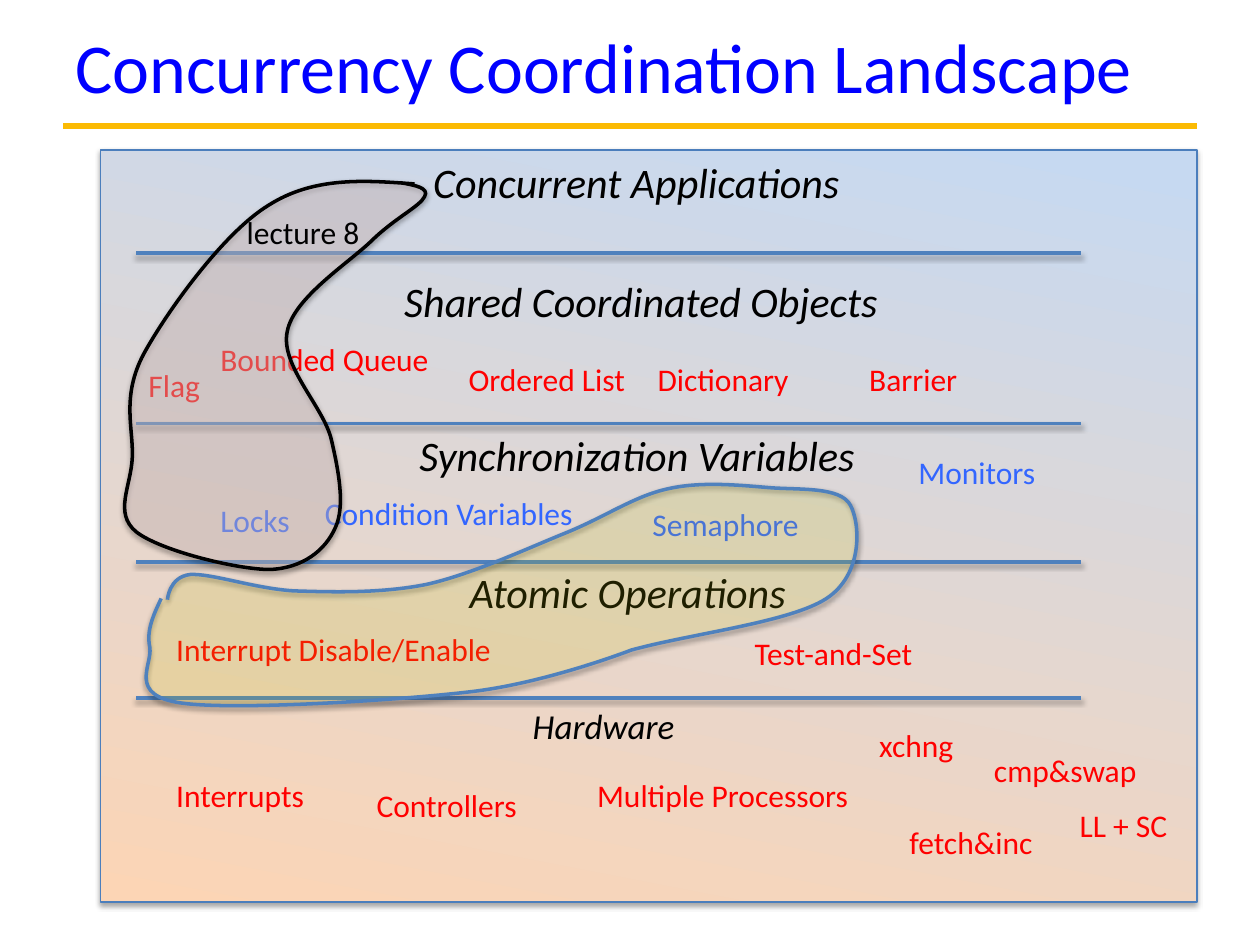
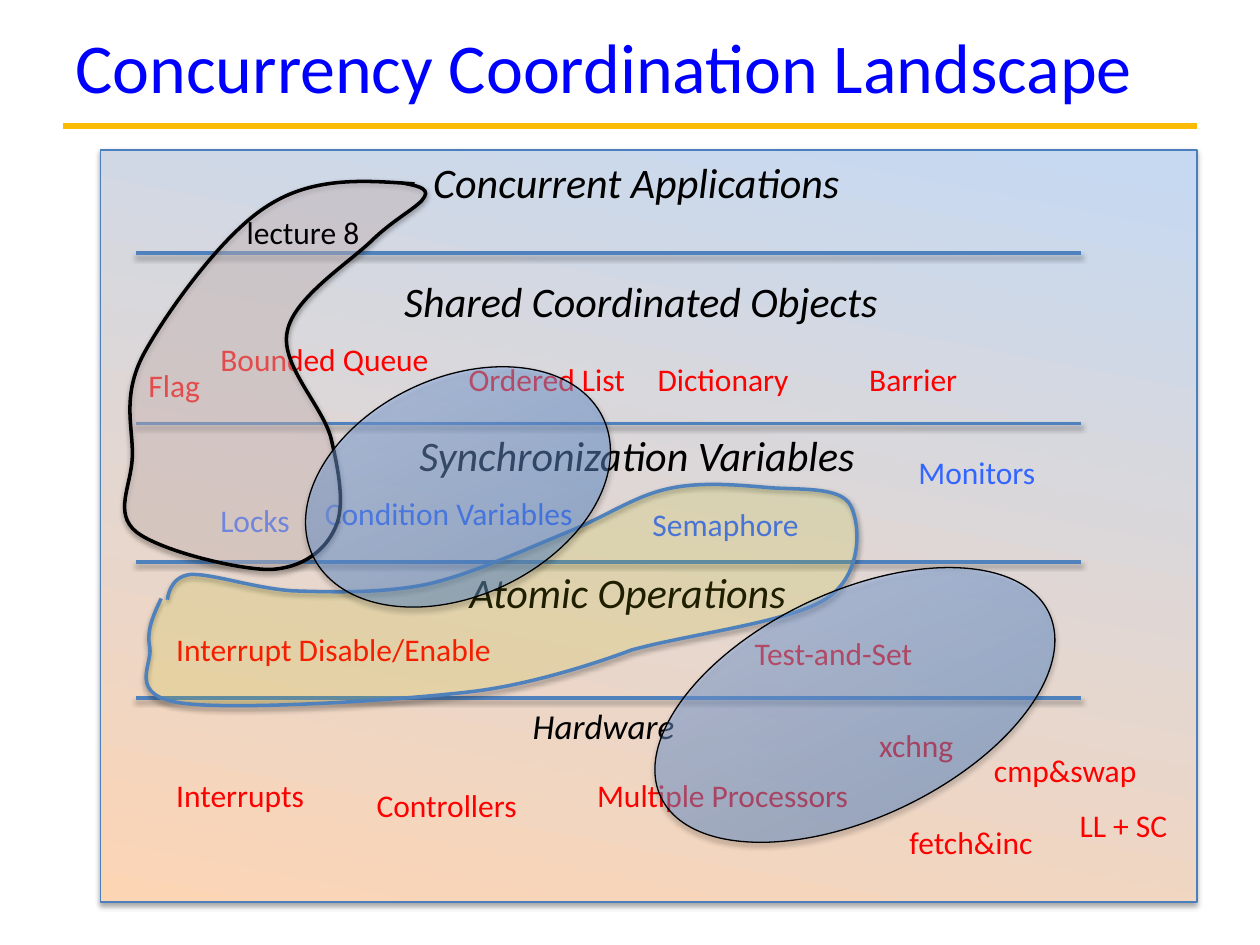
from lxml import etree
from pptx import Presentation
from pptx.dml.color import RGBColor
from pptx.enum.shapes import MSO_CONNECTOR, MSO_SHAPE
from pptx.enum.text import MSO_ANCHOR, MSO_AUTO_SIZE, PP_ALIGN
from pptx.oxml.ns import qn
from pptx.util import Inches, Pt

STRAIGHT = MSO_CONNECTOR.STRAIGHT
RECTANGLE, OVAL = MSO_SHAPE.RECTANGLE, MSO_SHAPE.OVAL
LEFT, MIDDLE = PP_ALIGN.LEFT, MSO_ANCHOR.MIDDLE
NO_FIT, GROW = MSO_AUTO_SIZE.NONE, MSO_AUTO_SIZE.SHAPE_TO_FIT_TEXT

FONT = "Calibri"
TITLE = "Concurrency Coordination Landscape"
COLORS = {
    "title": "0000FF", "rule": "FBBA03", "black": "000000",
    "red": "FF0000", "blue": "3366FF", "divider": "4F81BD",
    "panel_line": "4B7EBC", "panel_top": "C6D9F1", "panel_bottom": "FCD5B5",
    "lecture": "F2DCDB", "semaphore": "FFFF00",
    "oval_dark": "3F80CE", "oval_light": "A4C4FF",
}
C = {name: RGBColor.from_string(value) for name, value in COLORS.items()}

# text, left, top, width, height, size
LAYERS = [
    ("Concurrent Applications", 3.34, 1.19, 3.54, 0.5, 24),
    ("Shared Coordinated Objects", 3.11, 2.14, 4.08, 0.5, 24),
    ("Synchronization Variables", 3.23, 3.36, 3.8, 0.5, 24),
    ("Atomic Operations", 3.63, 4.45, 2.83, 0.5, 24),
    ("Hardware", 4.13, 5.54, 1.4, 0.44, 20),
]
DIVIDERS = [2.01, 3.36, 4.46, 5.54]

# text, left, top, width, colour, wrap
ITEMS = [
    ("Bounded Queue", 1.65, 2.65, 1.91, "red", True),
    ("Ordered List", 3.62, 2.81, 1.91, "red", True),
    ("Dictionary", 5.12, 2.81, 1.91, "red", True),
    ("Barrier", 6.8, 2.81, 1.91, "red", True),
    ("Locks", 1.65, 3.93, 0.76, "blue", False),
    ("Semaphore", 5.08, 3.96, 1.38, "blue", False),
    ("Condition Variables", 2.48, 3.87, 2.21, "blue", False),
    ("Monitors", 7.19, 3.55, 1.15, "blue", False),
    ("Interrupt Disable/Enable", 1.3, 4.95, 2.82, "red", False),
    ("Test-and-Set", 5.89, 4.98, 1.51, "red", False),
    ("Interrupts", 1.3, 6.11, 1.23, "red", False),
    ("Controllers", 2.89, 6.19, 1.34, "red", False),
    ("Multiple Processors", 4.64, 6.11, 2.22, "red", False),
    ("cmp&swap", 7.79, 5.91, 1.35, "red", False),
    ("xchng", 6.88, 5.71, 0.8, "red", False),
    ("fetch&inc", 7.12, 6.48, 1.2, "red", False),
    ("LL + SC", 8.47, 6.35, 0.92, "red", False),
    ("Flag", 1.08, 2.86, 1.91, "red", True),
]

# Box (left, top, width, height) and chain of cubic curves:
# a start point, then two control points and an end point for each curve
LECTURE_BOX = (0.99, 1.44, 2.39, 3.08)
LECTURE_CURVE = [
    (3.29, 1.46),
    (2.89, 1.43), (2.49, 1.4), (2.13, 1.63),
    (1.77, 1.85), (1.32, 2.48), (1.14, 2.81),
    (0.96, 3.15), (1.06, 3.4), (1.05, 3.63),
    (1.04, 3.86), (0.9, 4.07), (1.08, 4.22),
    (1.27, 4.37), (1.88, 4.52), (2.14, 4.52),
    (2.4, 4.51), (2.58, 4.37), (2.66, 4.19),
    (2.74, 4.02), (2.69, 3.75), (2.63, 3.49),
    (2.57, 3.23), (2.22, 2.9), (2.28, 2.63),
    (2.33, 2.36), (2.78, 2.08), (2.96, 1.9),
    (3.15, 1.72), (3.33, 1.64), (3.37, 1.56),
    (3.41, 1.49), (3.29, 1.47), (3.18, 1.45),
]
SEMAPHORE_BOX = (1.16, 3.84, 5.64, 1.76)
SEMAPHORE_CURVE = [
    (1.28, 4.75),
    (1.22, 4.88), (1.16, 5), (1.19, 5.14),
    (1.21, 5.28), (1.01, 5.52), (1.44, 5.58),
    (1.86, 5.64), (3.15, 5.56), (3.74, 5.49),
    (4.34, 5.42), (5.01, 5.16), (5.01, 5.16),
    (5.48, 5.03), (6.27, 4.94), (6.56, 4.75),
    (6.85, 4.56), (6.83, 4.16), (6.75, 4.01),
    (6.67, 3.86), (6.34, 3.89), (6.1, 3.87),
    (5.86, 3.85), (5.56, 3.82), (5.3, 3.88),
    (5.03, 3.94), (4.81, 4.1), (4.49, 4.23),
    (4.17, 4.36), (3.74, 4.56), (3.38, 4.64),
    (3.02, 4.71), (2.65, 4.7), (2.33, 4.69),
    (2.02, 4.67), (1.68, 4.55), (1.51, 4.56),
    (1.34, 4.58), (1.33, 4.76), (1.33, 4.76),
]

# left, top, width, height of the ovals on the second slide
OVALS = [(5.08, 4.7, 3.41, 1.79), (2.36, 3, 2.55, 1.73)]

# strength in percent, distance in points
FILL_SHADOW, LINE_SHADOW = (35, 1.8), (38, 1.6)


def add_text(shapes, text, left, top, width, height, size=18, color="black",
             italic=False, wrap=False):
    tf = shapes.add_textbox(Inches(left), Inches(top),
                            Inches(width), Inches(height)).text_frame
    tf.word_wrap = wrap
    tf.auto_size = GROW
    r = tf.paragraphs[0].add_run()
    r.text = text
    r.font.name, r.font.size = FONT, Pt(size)
    r.font.italic = italic
    r.font.color.rgb = C[color]


def finish(shape, line, width, shadow=None, opacity=None):
    """Set the line, the fill opacity in percent and the shadow."""
    sp_pr = shape.element.spPr
    if opacity:
        for color in sp_pr.iter(qn("a:srgbClr")):
            etree.SubElement(color, qn("a:alpha"), val=str(opacity * 1000))
    shape.line.color.rgb = C[line]
    shape.line.width = Pt(width)
    effects = etree.SubElement(sp_pr, qn("a:effectLst"))
    if shadow:
        strength, distance = shadow
        outer = etree.SubElement(effects, qn("a:outerShdw"), blurRad=str(Pt(3.1)),
                                 dist=str(Pt(distance)), dir="5400000", rotWithShape="0")
        color = etree.SubElement(outer, qn("a:srgbClr"), val=COLORS["black"])
        etree.SubElement(color, qn("a:alpha"), val=str(strength * 1000))


prs = Presentation()
prs.slide_width, prs.slide_height = Inches(10), Inches(7.5)
layout = prs.slide_layouts[5]
title = layout.placeholders[0]
title.left, title.top = Inches(0.5), Inches(0.04)
title.width, title.height = Inches(9), Inches(0.96)

for with_ovals in (False, True):
    s = prs.slides.add_slide(layout)
    if not with_ovals:
        # The title rule moves to the layout, so both slides show it
        rule = s.shapes.add_connector(STRAIGHT, Inches(0.5), Inches(1), Inches(9.5), Inches(1))
        finish(rule, "rule", 3.75)
        layout.shapes.element.append(rule.element)

    tf = s.shapes.title.text_frame
    tf.auto_size, tf.vertical_anchor = NO_FIT, MIDDLE
    p = tf.paragraphs[0]
    p.alignment = LEFT
    r = p.add_run()
    r.text = TITLE
    r.font.name, r.font.size = FONT, Pt(40)
    r.font.color.rgb = C["title"]

    panel = s.shapes.add_shape(RECTANGLE, Inches(0.8), Inches(1.19), Inches(8.7), Inches(5.97))
    panel.fill.gradient()
    panel.fill.gradient_angle = 259
    top_stop, bottom_stop = panel.fill.gradient_stops
    top_stop.position, bottom_stop.position = 0.02, 1
    top_stop.color.rgb, bottom_stop.color.rgb = C["panel_top"], C["panel_bottom"]
    finish(panel, "panel_line", 0.75, FILL_SHADOW)

    for text, left, top, width, height, size in LAYERS:
        add_text(s.shapes, text, left, top, width, height, size=size, italic=True)
    for y in DIVIDERS:
        divider = s.shapes.add_connector(STRAIGHT, Inches(1.08), Inches(y), Inches(8.58), Inches(y))
        finish(divider, "divider", 2, LINE_SHADOW)
    for text, left, top, width, color, wrap in ITEMS:
        add_text(s.shapes, text, left, top, width, 0.4, color=color, wrap=wrap)

    lecture = s.shapes.add_group_shape()
    for shapes, box, curve, fill, opacity, line in (
            (lecture.shapes, LECTURE_BOX, LECTURE_CURVE, "lecture", 35, "black"),
            (s.shapes, SEMAPHORE_BOX, SEMAPHORE_CURVE, "semaphore", 12, "divider")):
        left, top, width, height = map(Inches, box)
        builder = shapes.build_freeform(left, top)
        builder.add_line_segments([(left + width, top + height)], close=False)
        region = builder.convert_to_shape()

        # The diagonal fixes the box; cubic curves take its place
        outline = region.element.spPr.find(".//" + qn("a:path"))
        for segment in list(outline):
            outline.remove(segment)
        for i, (x, y) in enumerate(curve):
            if i == 0:
                segment = etree.SubElement(outline, qn("a:moveTo"))
            elif i % 3 == 1:
                segment = etree.SubElement(outline, qn("a:cubicBezTo"))
            etree.SubElement(segment, qn("a:pt"), x=str(Inches(x) - left), y=str(Inches(y) - top))
        region.fill.solid()
        region.fill.fore_color.rgb = C[fill]
        finish(region, line, 2, LINE_SHADOW, opacity)
    add_text(lecture.shapes, "lecture 8", 1.86, 1.64, 1.11, 0.4)

    if with_ovals:
        for box in OVALS:
            oval = s.shapes.add_shape(OVAL, *map(Inches, box))
            oval.rotation = 334.6
            oval.fill.gradient()
            oval.fill.gradient_angle = 90
            for stop, position, color in zip(oval.fill.gradient_stops, (0, 1),
                                             ("oval_dark", "oval_light")):
                stop.position = position
                stop.color.rgb = C[color]
            finish(oval, "black", 0.75, FILL_SHADOW, 44)

prs.save("out.pptx")
